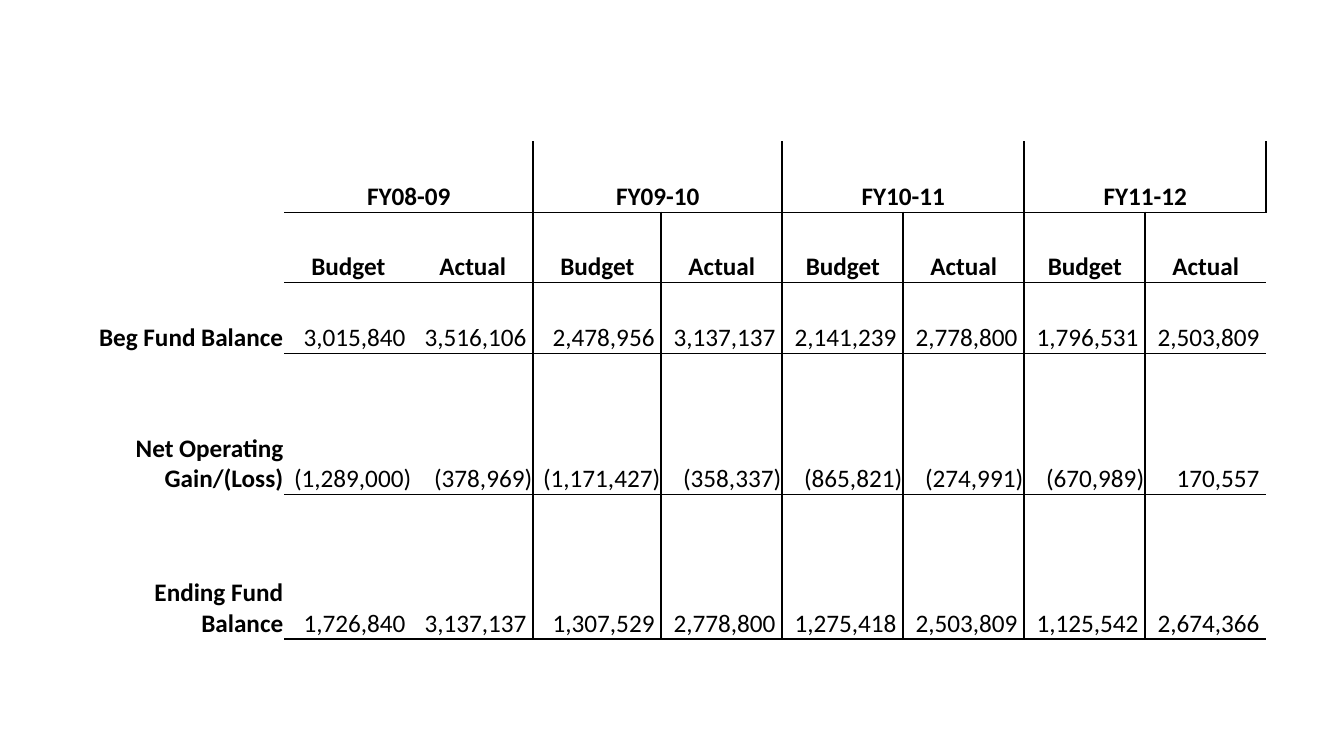
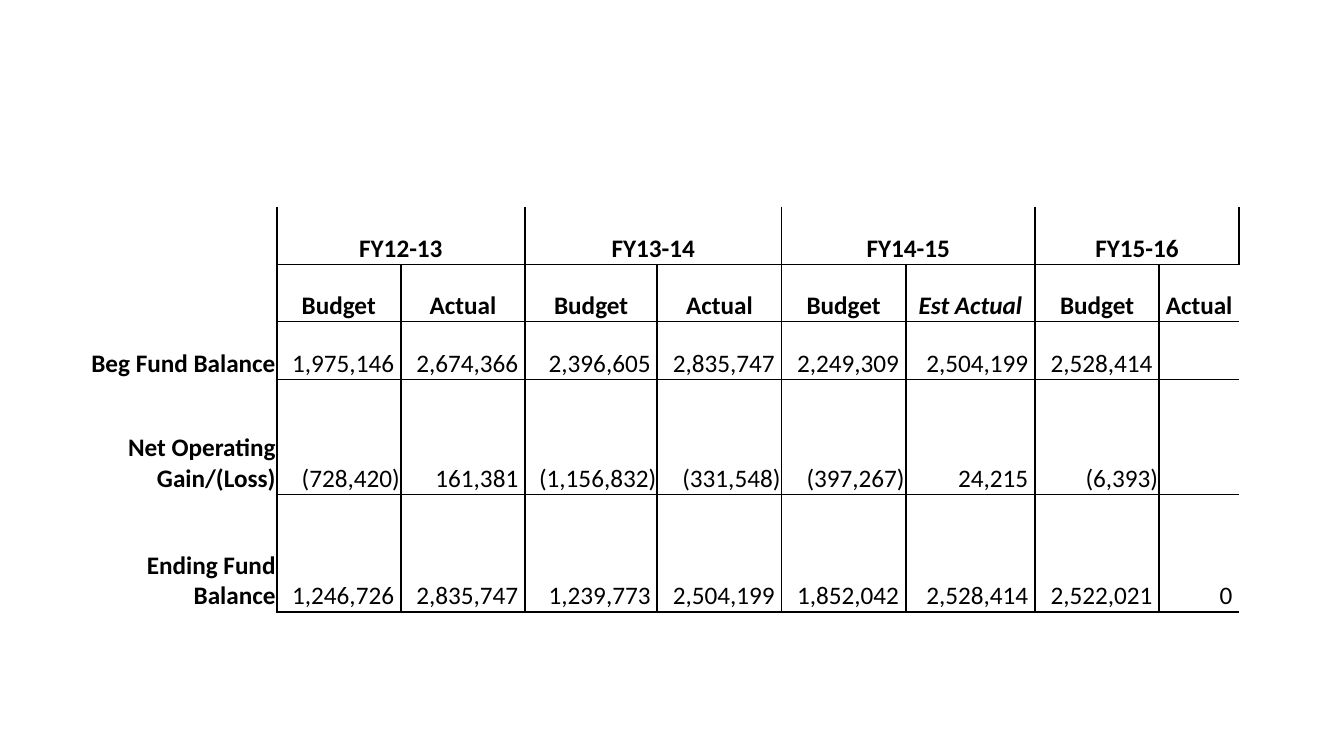
from dataclasses import dataclass
from itertools import chain

from lxml.etree import SubElement
from pptx import Presentation
from pptx.dml.color import RGBColor
from pptx.enum.text import MSO_ANCHOR as Anchor, PP_ALIGN as Align
from pptx.oxml.ns import qn
from pptx.util import Inches, Pt


@dataclass(frozen=True)
class Theme:
    font: str = "Calibri"
    size: int = 18
    ink: str = "000000"
    thin: float = 0.5
    divider: float = 1.5
    total: float = 2
    inset: float = 0.01
    table_style: str = "{2D5ABB26-0587-4C30-8999-92F81FD0307C}"


@dataclass(frozen=True)
class Box:
    left: float
    top: float
    width: float
    height: float


@dataclass(frozen=True)
class Year:
    name: str
    budget: tuple
    actual: tuple
    estimated: bool = False


THEME = Theme()
SLIDE_WIDTH, SLIDE_HEIGHT = 13.33, 7.5
ROW_SHARES = (1, 1, 1, 2, 2.04)
ROW_LABELS = ("", "", "Beg Fund Balance", "Net Operating Gain/(Loss)", "Ending Fund Balance")
RULES_BELOW = {0: THEME.thin, 1: THEME.thin, 3: THEME.thin, 4: THEME.total}

EARLIER_YEARS = (
    Year("FY08-09", (3015840, -1289000), (3516106, -378969)),
    Year("FY09-10", (2478956, -1171427), (3137137, -358337)),
    Year("FY10-11", (2141239, -865821), (2778800, -274991)),
    Year("FY11-12", (1796531, -670989), (2503809, 170557)),
)
LATER_YEARS = (
    Year("FY12-13", (1975146, -728420), (2674366, 161381)),
    Year("FY13-14", (2396605, -1156832), (2835747, -331548)),
    Year("FY14-15", (2249309, -397267), (2504199, 24215), estimated=True),
    Year("FY15-16", (2528414, -6393), (None, None)),
)


def split(total, shares):
    return [Inches(total * share / sum(shares)) for share in shares]


def accounting(amount):
    if amount is None:
        return ""
    return f"({-amount:,})" if amount < 0 else f"{amount:,} "


def amounts_column(heading, beginning, net):
    ending = (beginning or 0) + (net or 0)
    return [heading, *map(accounting, (beginning, net, ending))]


def year_columns(year):
    actual_heading = "Est Actual" if year.estimated else "Actual"
    return (
        [year.name, *amounts_column("Budget", *year.budget)],
        ["", *amounts_column(actual_heading, *year.actual)],
    )


def write_cell(cell, text, align, bold, italic):
    cell.vertical_anchor = Anchor.BOTTOM
    cell.margin_left = cell.margin_right = cell.margin_top = Inches(THEME.inset)
    cell.margin_bottom = 0
    cell.text = text
    para = cell.text_frame.paragraphs[0]
    para.alignment = align
    para.font.name = THEME.font
    para.font.size = Pt(THEME.size)
    para.font.bold = bold
    para.font.italic = italic
    para.font.color.rgb = RGBColor.from_string(THEME.ink)


def draw_borders(cell, widths):
    properties = cell._tc.get_or_add_tcPr()
    for side in "LRTB":
        if widths.get(side):
            line = SubElement(properties, qn(f"a:ln{side}"), w=str(Pt(widths[side])))
            fill = SubElement(line, qn("a:solidFill"))
            SubElement(fill, qn("a:srgbClr"), val=THEME.ink)
    cell.fill.background()


def cell_borders(row, column, last_column, open_left):
    if column == 0:
        return {}
    starts_year = column % 2 == 1
    left = starts_year and (column > 1 or not open_left)
    right = column < last_column and (not starts_year or row == 0)
    return {
        "L": THEME.divider if left else None,
        "R": THEME.divider if right else None,
        "T": RULES_BELOW.get(row - 1),
        "B": RULES_BELOW.get(row),
    }


def fund_table(page, box, column_shares, years, open_left):
    columns = [ROW_LABELS, *chain.from_iterable(map(year_columns, years))]
    frame = page.shapes.add_table(
        len(ROW_SHARES), len(columns),
        *map(Inches, (box.left, box.top, box.width, box.height)),
    )
    table = frame.table
    table.first_row = table.horz_banding = False
    table._tbl.tblPr.find(qn("a:tableStyleId")).text = THEME.table_style
    for column, width in zip(table.columns, split(box.width, column_shares)):
        column.width = width
    for row, height in zip(table.rows, split(box.height, ROW_SHARES)):
        row.height = height

    for column, texts in enumerate(columns):
        for row, text in enumerate(texts):
            cell = table.cell(row, column)
            heading = row < 2
            write_cell(
                cell, text,
                align=Align.CENTER if heading else Align.RIGHT,
                bold=heading or column == 0,
                italic=text == "Est Actual",
            )
            draw_borders(cell, cell_borders(row, column, len(columns) - 1, open_left))
    for column in range(1, len(columns), 2):
        table.cell(0, column).merge(table.cell(0, column + 1))


def fund_slide(deck, *table_parts):
    blank = deck.slide_layouts[6]
    fund_table(deck.slides.add_slide(blank), *table_parts)


def main():
    deck = Presentation()
    deck.slide_width, deck.slide_height = Inches(SLIDE_WIDTH), Inches(SLIDE_HEIGHT)
    fund_slide(
        deck, Box(0.75, 1.4, 11.81, 4.94),
        (2.07, 1.27, 1.2, 1.27, 1.2, 1.2, 1.2, 1.2, 1.2), EARLIER_YEARS, True,
    )
    fund_slide(
        deck, Box(0.62, 2.05, 11.67, 4.02),
        (2.12, 1.23, 1.23, 1.31, 1.23, 1.23, 1.28, 1.23, 0.79), LATER_YEARS, False,
    )
    deck.save("out.pptx")


if __name__ == "__main__":
    main()
